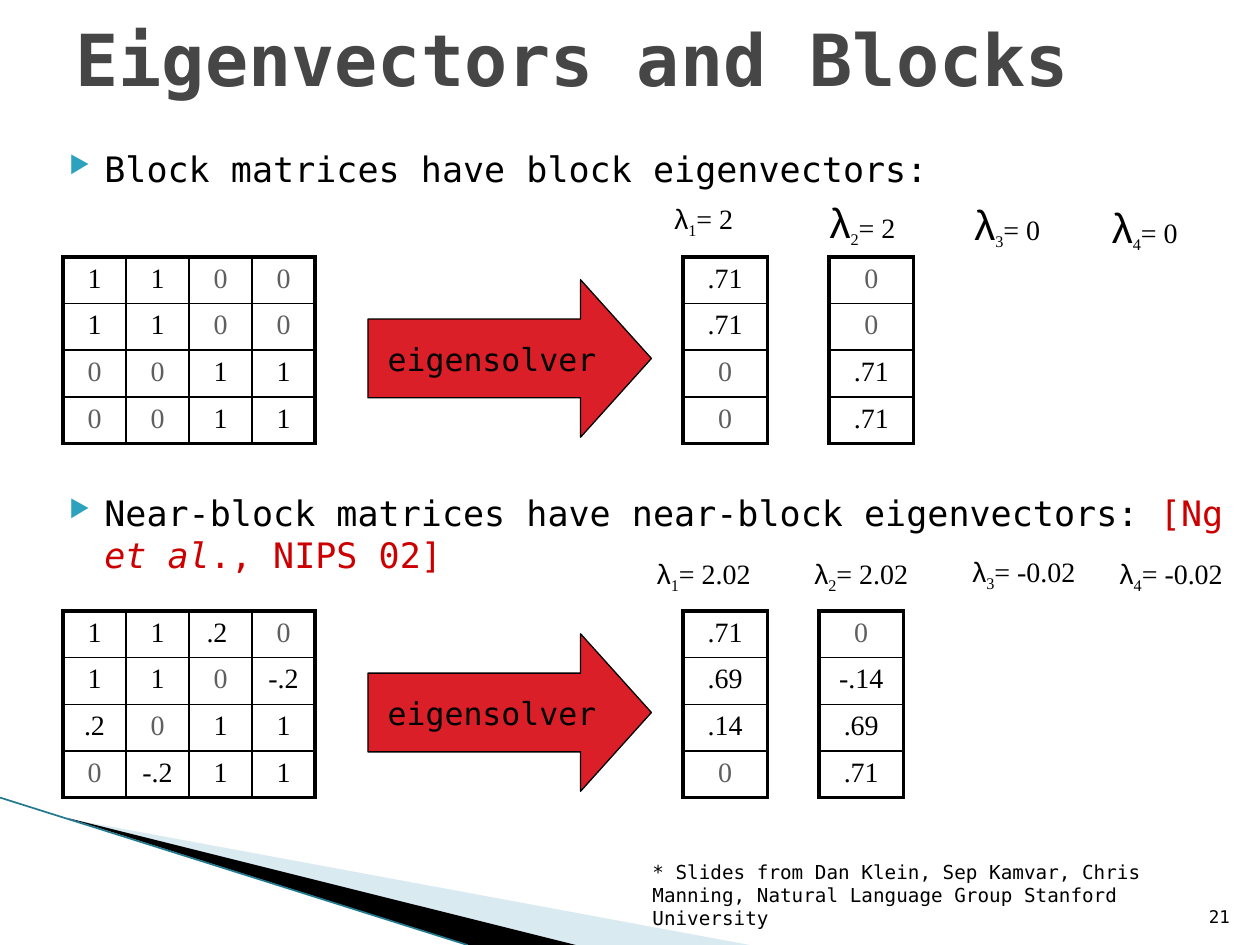
from lxml.etree import SubElement
from pptx import Presentation
from pptx.dml.color import RGBColor
from pptx.enum.shapes import MSO_CONNECTOR, MSO_SHAPE
from pptx.enum.text import MSO_ANCHOR, PP_ALIGN
from pptx.oxml import parse_xml
from pptx.oxml.ns import nsdecls, qn
from pptx.util import Inches, Pt

BLACK = RGBColor(0x00, 0x00, 0x00)
GRAY = RGBColor(0x5F, 0x5F, 0x5F)
TITLE_GRAY = RGBColor(0x46, 0x46, 0x46)
RED = RGBColor(0xCC, 0x00, 0x00)
ARROW_RED = RGBColor(0xDA, 0x1F, 0x28)
PALE_BLUE = RGBColor(0xA0, 0xCB, 0xDC)
TEAL = RGBColor(0x21, 0x79, 0x8F)
MONO = "DejaVu Sans Mono"
SERIF = "Times New Roman"
THICK, THIN = 2.25, 1
ROW_HEIGHT = 0.37


def write(paragraph, text, size=16, font=MONO, color=BLACK, bold=False,
          italic=False, baseline=0):
    """Append a formatted run; baseline is a percentage shift."""
    run = paragraph.add_run()
    run.text = text
    run.font.size = Pt(size)
    run.font.name = font
    run.font.color.rgb = color
    run.font.bold = bold
    run.font.italic = italic
    if baseline:
        run.font._element.set("baseline", str(baseline * 1000))


def add_matrix(left, top, column_width, rows):
    """Add a table with a thick frame, thin inner lines and gray zeros."""
    row_count, column_count = len(rows), len(rows[0])
    table = slide.shapes.add_table(
        row_count, column_count, Inches(left), Inches(top),
        Inches(column_width * column_count), Inches(ROW_HEIGHT * row_count)).table
    table.first_row = table.horz_banding = False
    for column in table.columns:
        column.width = Inches(column_width)
    for i, values in enumerate(rows):
        table.rows[i].height = Inches(ROW_HEIGHT)
        for j, value in enumerate(values):
            cell = table.cell(i, j)
            cell.fill.background()
            paragraph = cell.text_frame.paragraphs[0]
            paragraph.alignment = PP_ALIGN.CENTER
            write(paragraph, value, font=SERIF, color=GRAY if value == "0" else BLACK)
            on_frame = {"lnL": j == 0, "lnR": j == column_count - 1,
                        "lnT": i == 0, "lnB": i == row_count - 1}
            properties = cell._tc.get_or_add_tcPr()
            for position, (side, outer) in enumerate(on_frame.items()):
                width = Pt(THICK if outer else THIN)
                properties.insert(position, parse_xml(
                    f'<a:{side} {nsdecls("a")} w="{width}"><a:solidFill>'
                    f'<a:srgbClr val="{BLACK}"/></a:solidFill></a:{side}>'))


presentation = Presentation()
presentation.slide_width = Inches(10)
presentation.slide_height = Inches(7.5)
slide = presentation.slides.add_slide(presentation.slide_layouts[5])

# Corner decoration
wedges = [
    ([(0.55, 6.5), (5.95, 7.5), (4.56, 7.5)], PALE_BLUE, 40),
    ([(0.53, 6.49), (4.57, 7.5), (3.72, 7.5)], BLACK, 100),
]
for points, color, opacity in wedges:
    corners = [(Inches(x), Inches(y)) for x, y in points]
    builder = slide.shapes.build_freeform(*corners[0])
    builder.add_line_segments(corners[1:], close=True)
    wedge = builder.convert_to_shape()
    wedge.shadow.inherit = False
    wedge.fill.solid()
    wedge.fill.fore_color.rgb = color
    wedge.line.fill.background()
    if opacity < 100:
        color_element = wedge._element.spPr.find(qn("a:solidFill"))[0]
        SubElement(color_element, qn("a:alpha"), val=str(opacity * 1000))

edge = slide.shapes.add_connector(
    MSO_CONNECTOR.STRAIGHT, Inches(0), Inches(6.33), Inches(3.71), Inches(7.5))
edge.line.color.rgb = TEAL
edge.line.width = Pt(0.95)
SubElement(edge._element.spPr, qn("a:effectLst"))

# Title
title = slide.shapes.title
title.left, title.top = Inches(0.5), Inches(-0.17)
title.width, title.height = Inches(9), Inches(1.25)
title.text_frame.vertical_anchor = MSO_ANCHOR.MIDDLE
title.text_frame.paragraphs[0].alignment = PP_ALIGN.LEFT
write(title.text_frame.paragraphs[0], "Eigenvectors and Blocks",
      size=41, color=TITLE_GRAY, bold=True)

# Bullet statements
statements = [
    (1.12, 0.45, [("Block matrices have block eigenvectors:", {})]),
    (3.85, 0.75, [("Near-block matrices have near-block eigenvectors: ", {}),
                  ("[Ng ", {"color": RED}),
                  ("et al", {"color": RED, "italic": True}),
                  ("., NIPS 02]", {"color": RED})]),
]
for top, height, parts in statements:
    box = slide.shapes.add_textbox(Inches(0.33), Inches(top), Inches(9.5), Inches(height))
    box.text_frame.word_wrap = True
    paragraph = box.text_frame.paragraphs[0]
    properties = paragraph._p.get_or_add_pPr()
    properties.set("marL", str(Inches(0.4)))
    properties.set("indent", str(Inches(-0.28)))
    bullet_color = SubElement(properties, qn("a:buClr"))
    SubElement(bullet_color, qn("a:srgbClr"), val="2DA2BF")
    SubElement(properties, qn("a:buSzPct"), val="68000")
    SubElement(properties, qn("a:buChar"), char="▶")
    for text, text_format in parts:
        write(paragraph, text, size=20, **text_format)

# Each example: matrix, eigensolver arrow, two eigenvectors
examples = [
    (2.04, 2.22, 6.58,
     [["1", "1", "0", "0"], ["1", "1", "0", "0"],
      ["0", "0", "1", "1"], ["0", "0", "1", "1"]],
     [".71", ".71", "0", "0"], ["0", "0", ".71", ".71"]),
    (4.85, 5.03, 6.5,
     [["1", "1", ".2 ", "0"], ["1", "1", "0", "-.2"],
      [".2", "0", "1", "1"], ["0", "-.2", "1", "1"]],
     [".71", ".69", ".14", "0"], ["0", "-.14", ".69", ".71"]),
]
for top, arrow_top, second_left, matrix, first_vector, second_vector in examples:
    add_matrix(0.5, top, 0.5, matrix)
    arrow = slide.shapes.add_shape(
        MSO_SHAPE.RIGHT_ARROW, Inches(2.92), Inches(arrow_top), Inches(2.25), Inches(1.25))
    arrow.adjustments[0], arrow.adjustments[1] = 0.5, 0.45
    arrow.shadow.inherit = False
    arrow.fill.solid()
    arrow.fill.fore_color.rgb = ARROW_RED
    arrow.line.color.rgb = BLACK
    arrow.line.width = Pt(0.75)
    arrow.text_frame.word_wrap = False
    arrow.text_frame.vertical_anchor = MSO_ANCHOR.MIDDLE
    arrow.text_frame.paragraphs[0].alignment = PP_ALIGN.CENTER
    write(arrow.text_frame.paragraphs[0], "eigensolver", size=18)
    for left, vector in ((5.42, first_vector), (second_left, second_vector)):
        add_matrix(left, top, 0.67, [[value] for value in vector])

# Eigenvalue labels: left, top, width, height, lambda size, index, value
eigenvalues = [
    (5.17, 1.55, 0.83, 0.37, 16, "1", "= 2"),
    (6.43, 1.51, 0.83, 0.5, 24, "2", "= 2"),
    (7.58, 1.53, 0.83, 0.5, 24, "3", "= 0"),
    (8.67, 1.55, 0.83, 0.5, 24, "4", "= 0"),
    (5, 4.37, 1.17, 0.37, 16, "1", "= 2.02"),
    (6.25, 4.37, 1.17, 0.37, 16, "2", "= 2.02"),
    (7.5, 4.35, 1.25, 0.37, 16, "3", "= -0.02"),
    (8.67, 4.37, 1.25, 0.37, 16, "4", "= -0.02"),
]
for left, top, width, height, lambda_size, index, value in eigenvalues:
    label = slide.shapes.add_textbox(
        Inches(left), Inches(top), Inches(width), Inches(height))
    label.text_frame.word_wrap = True
    paragraph = label.text_frame.paragraphs[0]
    paragraph.alignment = PP_ALIGN.CENTER
    write(paragraph, "λ", size=lambda_size, font="Arial")
    write(paragraph, index, font=SERIF, baseline=-25)
    write(paragraph, value, font=SERIF)

# Credit and slide number
credit = slide.shapes.add_textbox(Inches(5.08), Inches(6.78), Inches(4.56), Inches(0.47))
credit.text_frame.word_wrap = True
write(credit.text_frame.paragraphs[0],
      "* Slides from Dan Klein, Sep Kamvar, Chris Manning, "
      "Natural Language Group Stanford University", size=11)

number = slide.shapes.add_textbox(Inches(9.46), Inches(7.01), Inches(0.4), Inches(0.4))
number.text_frame.word_wrap = True
number.text_frame.vertical_anchor = MSO_ANCHOR.BOTTOM
number.text_frame.paragraphs[0].alignment = PP_ALIGN.RIGHT
write(number.text_frame.paragraphs[0], "21", size=10)

presentation.save("out.pptx")
